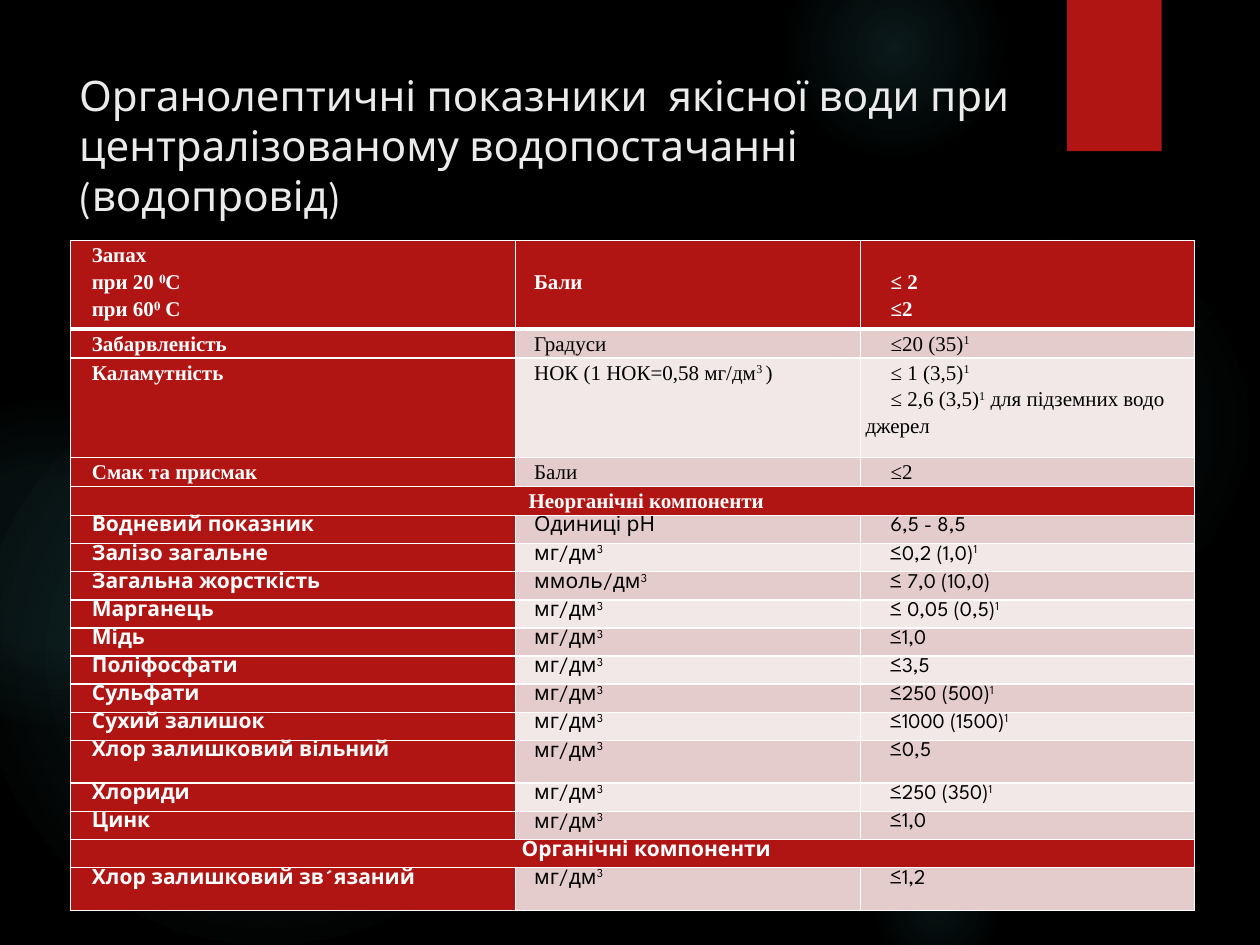
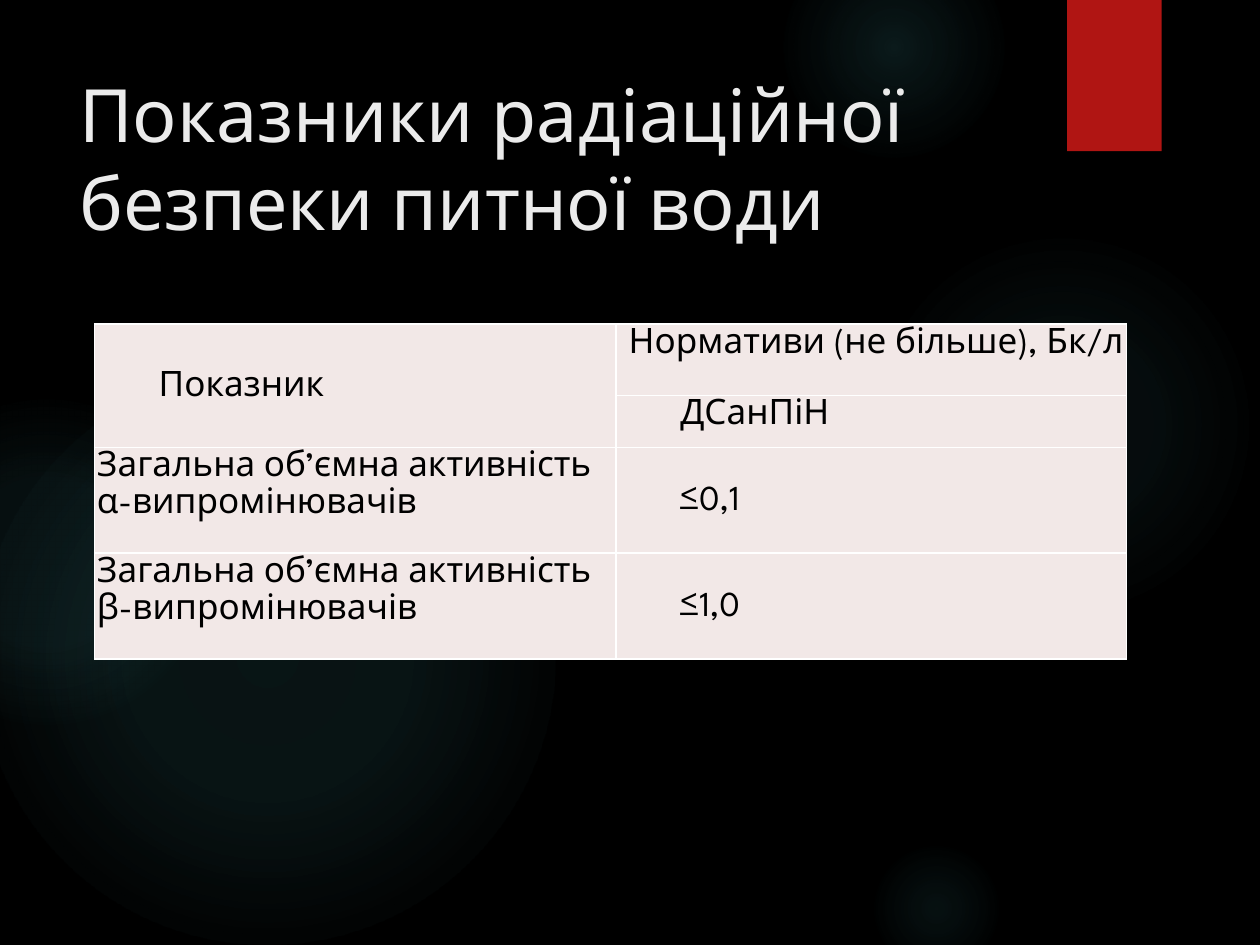
"""Builds two slides with tables of drinking water quality limits."""
from lxml import etree
from pptx import Presentation
from pptx.dml.color import RGBColor
from pptx.enum.shapes import MSO_SHAPE
from pptx.enum.text import MSO_ANCHOR, PP_ALIGN
from pptx.oxml.ns import nsdecls, qn
from pptx.util import Inches, Pt

OVAL, RECT = MSO_SHAPE.OVAL, MSO_SHAPE.RECTANGLE
TOP, MIDDLE = MSO_ANCHOR.TOP, MSO_ANCHOR.MIDDLE
LEFT, CENTER, JUSTIFY = PP_ALIGN.LEFT, PP_ALIGN.CENTER, PP_ALIGN.JUSTIFY

BLACK, WHITE, RED, GLOW, TITLE = "000000", "FFFFFF", "B01513", "50B9C1", "EBEBEB"
DARK_BAND, LIGHT_BAND = "E4CCCC", "F2E8E7"
SANS, SERIF = "League Spartan", "Times New Roman"

GLOWS = [
    (6.89, 1.83, 3.08, [(0, 7), (36, 6), (69, 0)]),
    (6.22, -0.5, 1.75, [(0, 14), (36, 7), (73, 0)]),
    (6.89, 6.67, 1.08, [(0, 9), (36, 5), (66, 0)]),
    (-0.17, 2.92, 4.58, [(0, 11), (36, 10), (75, 0)]),
    (-0.92, 3.17, 2.58, [(0, 8), (36, 8), (72, 0)]),
]

WATER_TITLE = "Органолептичні показники\u00a0 якісної води при централізованому водопостачанні (водопровід)"
WATER_ROWS = [
    ("Запах\nпри 20 ⁰С\nпри 60⁰ С", "Бали", "≤ 2\n≤2"),
    ("Забарвленість", "Градуси", "≤20 (35)^1"),
    ("Каламутність", "НОК (1 НОК=0,58 мг/дм^3 ^)",
     "≤ 1 (3,5)^1\n≤ 2,6 (3,5)^1^ для підземних водо джерел"),
    ("Смак та присмак", "Бали", "≤2"),
    ("Неорганічні компоненти",),
    ("Водневий показник", "Одиниці рН", "6,5 - 8,5"),
    ("Залізо загальне", "мг/дм^3", "≤0,2 (1,0)^1"),
    ("Загальна жорсткість", "ммоль/дм^3", "≤ 7,0 (10,0)"),
    ("Марганець", "мг/дм^3", "≤ 0,05 (0,5)^1"),
    ("Мідь", "мг/дм^3", "≤1,0"),
    ("Поліфосфати", "мг/дм^3", "≤3,5"),
    ("Сульфати", "мг/дм^3", "≤250 (500)^1"),
    ("Сухий залишок", "мг/дм^3", "≤1000 (1500)^1"),
    ("Хлор залишковий вільний", "мг/дм^3", "≤0,5"),
    ("Хлориди", "мг/дм^3", "≤250 (350)^1"),
    ("Цинк", "мг/дм^3", "≤1,0"),
    ("Органічні компоненти",),
    ("Хлор залишковий зв´язаний", "мг/дм^3", "≤1,2"),
]
WATER_COLS = [3.53, 2.74, 2.65]
WATER_INDENTS = [0.13, 0.11, 0.2]
WATER_HEIGHT = 5.3
TALL_ROWS = {0: 0.7, 2: 0.79, 13: 0.34, 17: 0.34}
FIRST_SANS_ROW = 5
HEADER_LINE = 0.21

RADIATION_TITLE = "Показники радіаційної безпеки питної води"
RADIATION_COLS = [4.14, 4.05]
RADIATION_HEIGHTS = [0.57, 0.41, 0.84, 0.84]
RADIATION_CELLS = [
    (0, 0, "Показник", 0.49, MIDDLE, 10),
    (0, 1, "Нормативи (не більше), Бк/л", 0.08, TOP, 10),
    (1, 1, "ДСанПіН", 0.49, TOP, 10),
    (2, 0, "Загальна об’ємна активність\nα-випромінювачів", 0, TOP, 0),
    (2, 1, "≤0,1", 0.49, MIDDLE, 10),
    (3, 0, "Загальна об’ємна активність\nβ-випромінювачів", 0, TOP, 0),
    (3, 1, "≤1,0", 0.49, MIDDLE, 10),
]


def color(hex_string):
    return RGBColor.from_string(hex_string)


def add_shape(s, kind, fill, *box):
    sp = s.shapes.add_shape(kind, *map(Inches, box))
    sp.shadow.inherit = False
    sp.line.fill.background()
    sp.fill.solid()
    sp.fill.fore_color.rgb = color(fill)
    return sp


def add_glow(s, x, y, size, stops):
    sp = add_shape(s, OVAL, GLOW, x, y, size, size)
    stop_xml = "".join(
        f'<a:gs pos="{pos * 1000}"><a:srgbClr val="{GLOW}">'
        f'<a:alpha val="{alpha * 1000}"/></a:srgbClr></a:gs>' for pos, alpha in stops)
    gradient = etree.fromstring(
        f'<a:gradFill {nsdecls("a")} rotWithShape="1"><a:gsLst>{stop_xml}</a:gsLst>'
        '<a:path path="circle"><a:fillToRect l="50000" t="50000" r="50000" b="50000"/>'
        '</a:path></a:gradFill>')
    props = sp.element.spPr
    props.replace(props.find(qn("a:solidFill")), gradient)


def write(tf, text, fmt, align=LEFT, indent=0, spacing=1.15, after=0):
    for i, line in enumerate(text.split("\n")):
        p = tf.paragraphs[0] if i == 0 else tf.add_paragraph()
        p.alignment, p.line_spacing, p.space_after = align, spacing, Pt(after)
        p._p.get_or_add_pPr().set("indent", str(Inches(indent)))
        for j, part in enumerate(line.split("^")):
            r = p.add_run()
            r.text = part
            r.font.color.rgb = color(fmt["color"])
            for name in ("name", "size", "bold"):
                setattr(r.font, name, fmt[name])
            if j % 2:
                r.font._element.set("baseline", "30000")


def text_format(name, size, hex_string, bold=False):
    return {"name": name, "size": Pt(size), "color": hex_string, "bold": bold}


def style_cell(cell, fill, side_margin, top_line=1, bottom_line=1):
    cell.margin_left = cell.margin_right = Inches(side_margin)
    cell.margin_top = cell.margin_bottom = 0
    cell.fill.solid()
    cell.fill.fore_color.rgb = color(fill)
    props = cell._tc.get_or_add_tcPr()
    widths = {"L": 1, "R": 1, "T": top_line, "B": bottom_line}
    for i, (side, width) in enumerate(widths.items()):
        props.insert(i, etree.fromstring(
            f'<a:ln{side} {nsdecls("a")} w="{Pt(width)}"><a:solidFill>'
            f'<a:srgbClr val="{WHITE}"/></a:solidFill></a:ln{side}>'))


def add_table(s, x, y, cols, heights):
    table = s.shapes.add_table(len(heights), len(cols), Inches(x), Inches(y),
                               Inches(sum(cols)), Inches(sum(heights))).table
    table.first_row = table.horz_banding = False
    for column, width in zip(table.columns, cols):
        column.width = Inches(width)
    for row, height in zip(table.rows, heights):
        row.height = Inches(height)
    return table


def add_slide(prs, title, size):
    s = prs.slides.add_slide(prs.slide_layouts[6])
    s.background.fill.solid()
    s.background.fill.fore_color.rgb = color(BLACK)
    for glow in GLOWS:
        add_glow(s, *glow)
    add_shape(s, RECT, RED, 8.47, 0, 0.75, 1.2)
    tf = s.shapes.add_textbox(*map(Inches, (0.53, 0.5, 7.72, 1.53))).text_frame
    tf.word_wrap = True
    tf.vertical_anchor = TOP
    write(tf, title, text_format(SANS, size, TITLE), spacing=1.0)
    return s


def water_slide(prs):
    s = add_slide(prs, WATER_TITLE, 24)
    count = len(WATER_ROWS)
    regular = (WATER_HEIGHT - sum(TALL_ROWS.values())) / (count - len(TALL_ROWS))
    heights = [TALL_ROWS.get(i, regular) for i in range(count)]
    table = add_table(s, 0.56, 1.91, WATER_COLS, heights)
    for i, texts in enumerate(WATER_ROWS):
        section = len(texts) == 1
        font, spacing = (SERIF, 1.15) if i < FIRST_SANS_ROW else (SANS, 1.1)
        for j in range(len(WATER_COLS)):
            cell = table.cell(i, j)
            strong = i == 0 or j == 0 or section
            band = DARK_BAND if i % 2 else LIGHT_BAND
            style_cell(cell, RED if strong else band, 0.04,
                       3 if i == 1 else 1, 3 if i == 0 else 1)
            if j < len(texts):
                write(cell.text_frame, texts[j],
                      text_format(font, 12, WHITE if strong else BLACK, strong),
                      CENTER if section else LEFT,
                      0.22 if section else WATER_INDENTS[j], spacing)
            if i == 0 and j:
                cell.margin_top = Inches(HEADER_LINE)
        if section:
            table.cell(i, 0).merge(table.cell(i, len(WATER_COLS) - 1))


def radiation_slide(prs):
    s = add_slide(prs, RADIATION_TITLE, 42)
    table = add_table(s, 0.75, 2.57, RADIATION_COLS, RADIATION_HEIGHTS)
    for cell in table.iter_cells():
        style_cell(cell, LIGHT_BAND, 0.02)
    for row, column, text, indent, anchor, after in RADIATION_CELLS:
        cell = table.cell(row, column)
        cell.vertical_anchor = anchor
        write(cell.text_frame, text, text_format(SANS, 20, BLACK), JUSTIFY, indent, after=after)
    table.cell(0, 0).merge(table.cell(1, 0))


def main():
    prs = Presentation()
    prs.slide_width, prs.slide_height = Inches(10), Inches(7.5)
    water_slide(prs)
    radiation_slide(prs)
    prs.save("out.pptx")


if __name__ == "__main__":
    main()
